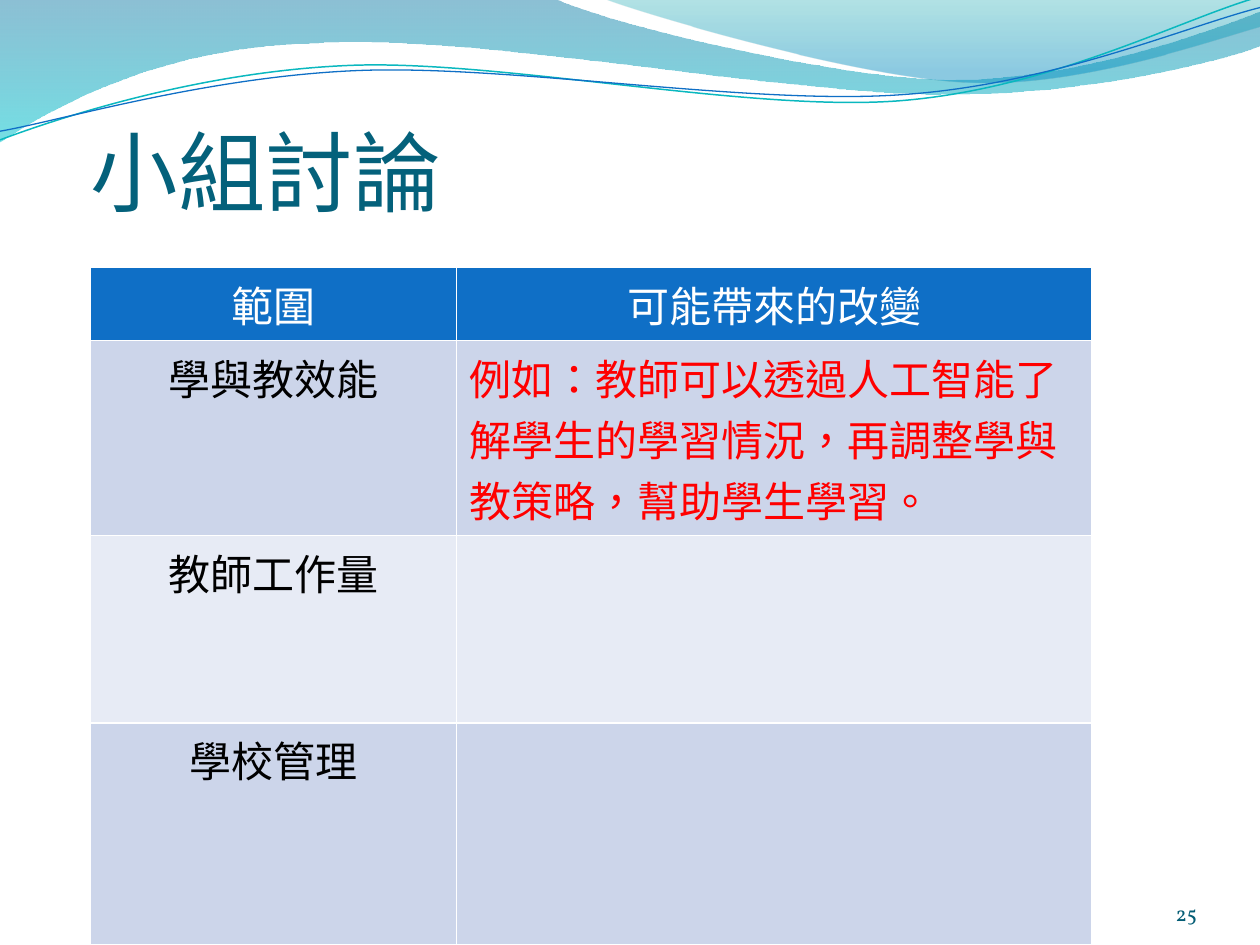
from dataclasses import dataclass

from lxml import etree
from pptx import Presentation
from pptx.dml.color import RGBColor
from pptx.enum.lang import MSO_LANGUAGE_ID
from pptx.enum.text import MSO_ANCHOR, PP_ALIGN
from pptx.oxml.ns import qn
from pptx.util import Pt

LEFT, CENTER, RIGHT = PP_ALIGN.LEFT, PP_ALIGN.CENTER, PP_ALIGN.RIGHT
BOTTOM = MSO_ANCHOR.BOTTOM
CHINESE = MSO_LANGUAGE_ID.TRADITIONAL_CHINESE


@dataclass(frozen=True)
class Theme:
    """Colours, fonts and type sizes of the slide."""
    title: str = "04617B"
    number: str = "045D75"
    header: str = "0F6FC6"
    bands: tuple = ("CCD5EA", "E7EBF5")
    white: str = "FFFFFF"
    black: str = "000000"
    example: str = "FF0000"
    wide_wave: tuple = ((0, "0074A1", 45), (1, "00C6CF", 55))
    right_wave: tuple = ((0, "00A1A9", 30), (0.8, "008BBF", 45))
    teal_line: str = "0AB8BF"
    blue_line: str = "0F6FC6"
    latin: str = "Vollkorn"
    chinese: str = "Noto Sans CJK SC"
    title_size: int = 50
    table_size: int = 24
    number_size: int = 12


THEME = Theme()

WIDE_WAVE = [
    [(0, 0)], [(317, -0.7)],
    [(342.7, 12.2), (478, 45.4), (545.8, 45.4)], [(614.2, 45.4), (689.8, 18.7), (720, 6.5)],
    [(720.7, 25.9)],
    [(707.8, 31.7), (626.4, 54.7), (537.1, 54)], [(447.8, 54), (275, 20.2), (185, 24.5)],
    [(92.9, 25.9), (33.1, 59.8), (-0.7, 81.4)], [(0, 0)],
]
RIGHT_WAVE = [
    [(344.9, -0.7)],
    [(366.5, 7.9), (491, 44.6), (553.7, 46.8)], [(616.3, 49.7), (691.9, 23), (720, 15.1)],
    [(720, 0)], [(344.9, -0.7)],
]
TEAL_LINE = [
    [(-1.4, 63)], [(33.8, 51.7), (114.1, 29.4), (199.8, 29.9)],
    [(284.8, 30.3), (425.9, 67.3), (512.5, 64.9)],
    [(599.1, 62.4), (676.5, 25.7), (720.2, 15.5)],
]
BLUE_LINE = [
    [(-1.1, 58)], [(32.9, 53.8), (118.3, 32.5), (204.1, 33)],
    [(290.6, 33.4), (428.9, 63.8), (515.5, 61.4)],
    [(601.4, 59.6), (678.4, 30.1), (721.4, 21.3)],
]
LINE_ROTATION = 357.3
ROWS = [
    ("範圍", "可能帶來的改變"),
    ("學與教效能", "例如：教師可以透過人工智能了解學生的學習情況，再調整學與教策略，幫助學生學習。"),
    ("教師工作量", ""),
    ("學校管理", ""),
]
COLUMN_WIDTHS = (209.5, 363)
ROW_HEIGHTS = (42, 111.5, 107, 127)


def rgb(value):
    """Return a colour from its hexadecimal digits."""
    return RGBColor.from_string(value)


def add_outline(slide, box, segments, closed):
    """Draw an outline of straight and cubic segments relative to the box."""
    points = [(Pt(x), Pt(y)) for segment in segments for x, y in segment]
    builder = slide.shapes.build_freeform(*points[0])
    builder.add_line_segments(points[1:], close=closed)
    shape = builder.convert_to_shape(Pt(box[0]), Pt(box[1]))
    shape.shadow.inherit = False
    steps = iter(shape.element.spPr.findall(f".//{qn('a:lnTo')}"))
    for segment in segments[1:]:
        group = [next(steps) for _ in segment]
        if len(group) == 3:
            curve = etree.Element(qn("a:cubicBezTo"))
            group[0].addprevious(curve)
            for step in group:
                curve.append(step[0])
                step.getparent().remove(step)
    return shape


def add_wave(slide, box, segments, stops):
    """Draw a wave with a translucent vertical gradient."""
    shape = add_outline(slide, box, segments, True)
    shape.line.fill.background()
    shape.fill.gradient()
    shape.fill.gradient_angle = 270
    for stop, (position, color, _) in zip(shape.fill.gradient_stops, stops):
        stop.position = position
        stop.color.rgb = rgb(color)
    colors = shape.element.spPr.findall(f".//{qn('a:gs')}/{qn('a:srgbClr')}")
    for element, (_, _, opacity) in zip(colors, stops):
        etree.SubElement(element, qn("a:alpha"), val=str(opacity * 1000))


def add_wave_header(slide, box):
    """Draw the waves and thin lines along the top."""
    add_wave(slide, box, WIDE_WAVE, THEME.wide_wave)
    add_wave(slide, box, RIGHT_WAVE, THEME.right_wave)
    for segments, color, width in ((TEAL_LINE, THEME.teal_line, 0.85),
                                   (BLUE_LINE, THEME.blue_line, 0.75)):
        shape = add_outline(slide, box, segments, False)
        shape.rotation = LINE_ROTATION
        shape.fill.background()
        shape.line.color.rgb = rgb(color)
        shape.line.width = Pt(width)


def write(text_frame, text, size, color, alignment, latin):
    """Set one paragraph of text and format it."""
    text_frame.text = text
    paragraph = text_frame.paragraphs[0]
    paragraph.alignment = alignment
    for run in paragraph.runs:
        run.font.size = Pt(size)
        run.font.bold = False
        run.font.color.rgb = rgb(color)
        run.font.name = latin
        run.font.language_id = CHINESE
        etree.SubElement(run.font._element, qn("a:ea"), typeface=THEME.chinese)


def add_label(slide, box, text, size, color, alignment, latin):
    """Add a bottom-anchored text box without margins."""
    text_frame = slide.shapes.add_textbox(*map(Pt, box)).text_frame
    text_frame.word_wrap = True
    text_frame.vertical_anchor = BOTTOM
    text_frame.margin_left = text_frame.margin_right = 0
    text_frame.margin_top = text_frame.margin_bottom = 0
    write(text_frame, text, size, color, alignment, latin)


def set_borders(cell, color, width):
    """Give a cell the same border on all four sides."""
    properties = cell._tc.get_or_add_tcPr()
    for side in ("a:lnL", "a:lnR", "a:lnT", "a:lnB"):
        line = etree.SubElement(properties, qn(side), w=str(Pt(width)))
        fill = etree.SubElement(line, qn("a:solidFill"))
        etree.SubElement(fill, qn("a:srgbClr"), val=color)


def add_discussion_table(slide, box):
    """Add the table of areas and possible changes."""
    table = slide.shapes.add_table(len(ROWS), len(COLUMN_WIDTHS), *map(Pt, box)).table
    for column, width in zip(table.columns, COLUMN_WIDTHS):
        column.width = Pt(width)
    for row_index, texts in enumerate(ROWS):
        table.rows[row_index].height = Pt(ROW_HEIGHTS[row_index])
        is_header = row_index == 0
        fill = THEME.header if is_header else THEME.bands[(row_index - 1) % 2]
        for column_index, text in enumerate(texts):
            is_example = column_index == 1 and not is_header
            color = THEME.white if is_header else THEME.example if is_example else THEME.black
            latin = THEME.latin if is_header != bool(column_index) else THEME.chinese
            cell = table.cell(row_index, column_index)
            set_borders(cell, THEME.white, 1)
            cell.fill.solid()
            cell.fill.fore_color.rgb = rgb(fill)
            write(cell.text_frame, text, THEME.table_size, color,
                  LEFT if is_example else CENTER, latin)


def main():
    """Build and save the group discussion slide."""
    presentation = Presentation()
    presentation.slide_width, presentation.slide_height = Pt(720), Pt(540)
    slide = presentation.slides.add_slide(presentation.slide_layouts[6])
    add_wave_header(slide, (0, 0))
    add_label(slide, (52, 37.5, 654, 90), "小組討論", THEME.title_size, THEME.title,
              LEFT, THEME.chinese)
    add_label(slide, (624, 500.4, 60, 28.8), "25", THEME.number_size, THEME.number,
              RIGHT, THEME.latin)
    add_discussion_table(slide, (51.4, 152.6, sum(COLUMN_WIDTHS), sum(ROW_HEIGHTS)))
    presentation.save("out.pptx")


if __name__ == "__main__":
    main()
